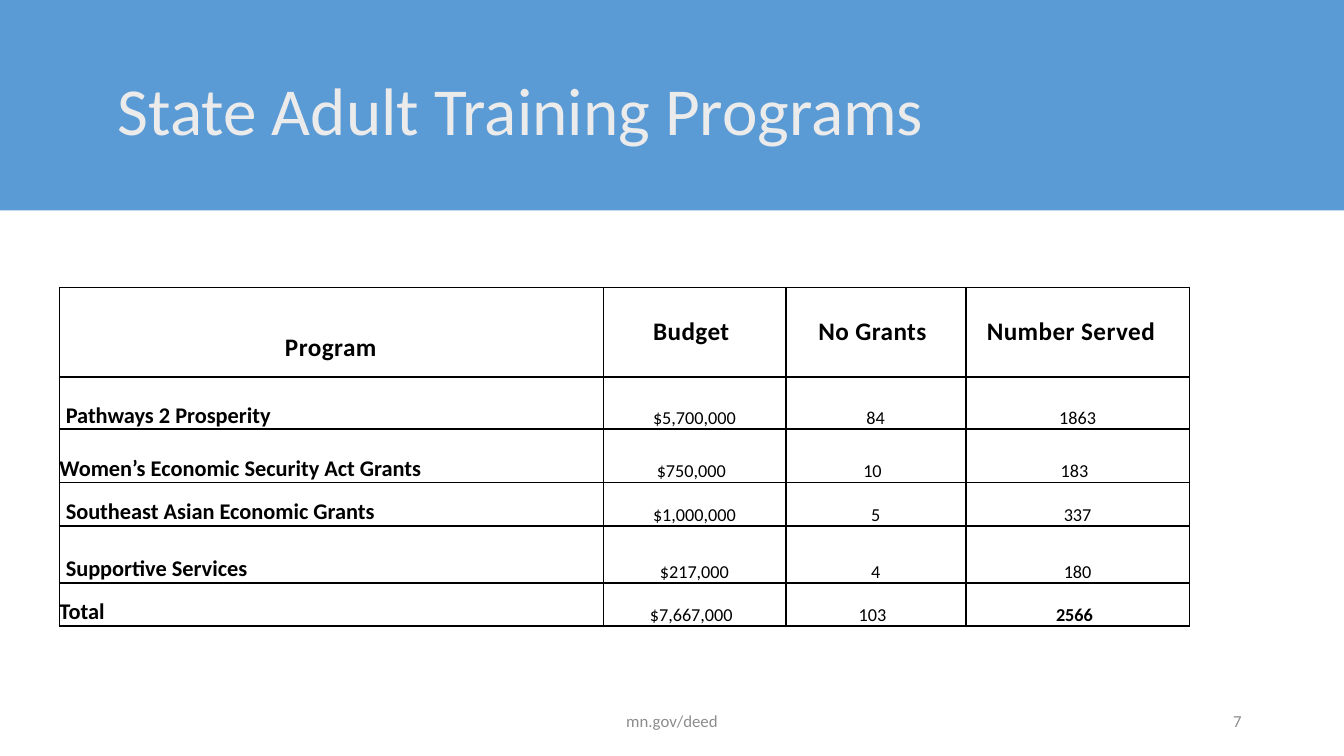
"""Build a slide with a table of state adult training programs."""
import pptx
import pptx.dml.color
import pptx.enum.shapes
import pptx.enum.text
import pptx.oxml
import pptx.oxml.ns
import pptx.util
from lxml import etree

Pt = pptx.util.Pt
Align = pptx.enum.text.PP_ALIGN
Anchor = pptx.enum.text.MSO_ANCHOR

TITLE = "State Adult Training Programs"
HEADERS = ["Program", "Budget", "No Grants", "Number Served"]
PROGRAMS = [
    ("Pathways 2 Prosperity", "$5,700,000", "84", "1863"),
    ("Women’s Economic Security Act Grants", "$750,000", "10", "183"),
    ("Southeast Asian Economic Grants", "$1,000,000", "5", "337"),
    ("Supportive Services", "$217,000", "4", "180"),
    ("Total", "$7,667,000", "103", "2566"),
]
FLUSH_PROGRAMS = {"Women’s Economic Security Act Grants", "Total"}
FOOTERS = [
    ("7", (678, 500.5, 216, 28.75), {"alignment": Align.RIGHT, "space_after": Pt(6)}),
    ("mn.gov/deed", (318, 500.5, 324, 28.75), {"alignment": Align.CENTER}),
]

SLIDE_SIZE = (960, 540)
BAND_BOX = (0, 0, 960, 150.25)
TITLE_BOX = (66, 28.75, 828, 104.5)
TABLE_ORIGIN = (42.5, 205.25)
COLUMN_WIDTHS = [388.5, 130.5, 128.5, 160]
ROW_HEIGHTS = [64, 37.25, 38, 31.25, 40.75, 30.75]
HEADER_MARGINS = [(22, 1), (0, 5), (0, 5), (0, 10)]


def color(value):
    return pptx.dml.color.RGBColor.from_string(value)


def set_values(target, values):
    for name, value in values.items():
        setattr(target, name, value)


def write(frame, text, size, hex_color, bold=False, **paragraph_format):
    paragraph = frame.paragraphs[0]
    set_values(paragraph, paragraph_format)
    run = paragraph.add_run()
    run.text = text
    set_values(run.font, {"name": "Calibri", "size": Pt(size), "bold": bold})
    run.font.color.rgb = color(hex_color)
    return run


def add_borders(cell):
    properties = cell._tc.get_or_add_tcPr()
    for position, side in enumerate(("lnL", "lnR", "lnT", "lnB")):
        line = etree.Element(pptx.oxml.ns.qn(f"a:{side}"), w=str(Pt(1)))
        fill = etree.SubElement(line, pptx.oxml.ns.qn("a:solidFill"))
        etree.SubElement(fill, pptx.oxml.ns.qn("a:srgbClr"), val="000000")
        properties.insert(position, line)


def add_title(slide):
    band = slide.shapes.add_shape(
        pptx.enum.shapes.MSO_SHAPE.RECTANGLE, *map(Pt, BAND_BOX))
    band.shadow.inherit = False
    band.fill.solid()
    band.fill.fore_color.rgb = color("5B9BD5")
    band.line.fill.background()
    slide.shapes.element.insert(2, band.element)
    title = slide.shapes.title
    set_values(title, dict(zip(("left", "top", "width", "height"), map(Pt, TITLE_BOX))))
    set_values(title.text_frame, {
        "vertical_anchor": Anchor.MIDDLE, "margin_left": Pt(18), "word_wrap": True})
    write(title.text_frame, TITLE, 48, "EBEBEB", alignment=Align.LEFT, line_spacing=0.9)


def format_cell(cell, text, row, column, program):
    cell.fill.solid()
    cell.fill.fore_color.rgb = color("FFFFFF")
    if row == 0:
        top, right = HEADER_MARGINS[column]
        left, anchor, size = 0, Anchor.MIDDLE, 18
    else:
        left = 0 if program in FLUSH_PROGRAMS else 4.5
        top, right, anchor = 0, 5, Anchor.BOTTOM
        size = 16 if column == 0 else 13
    set_values(cell, {
        "margin_left": Pt(left), "margin_right": Pt(right), "margin_top": Pt(top),
        "margin_bottom": 0, "vertical_anchor": anchor})
    grand_total = program == "Total" and column == len(HEADERS) - 1
    run = write(
        cell.text_frame, text, size, "000000", row == 0 or column == 0 or grand_total,
        alignment=Align.LEFT if row and column == 0 else Align.CENTER)
    if row == 0:
        run.font._element.set("spc", "30")
    add_borders(cell)


def add_program_table(slide):
    rows = [HEADERS, *PROGRAMS]
    size = (sum(COLUMN_WIDTHS), sum(ROW_HEIGHTS))
    table = slide.shapes.add_table(
        len(rows), len(HEADERS), *map(Pt, TABLE_ORIGIN + size)).table
    set_values(table, {"first_row": False, "horz_banding": False})
    for column, width in zip(table.columns, COLUMN_WIDTHS):
        column.width = Pt(width)
    for row, height in zip(table.rows, ROW_HEIGHTS):
        row.height = Pt(height)
    for row, values in enumerate(rows):
        for column, text in enumerate(values):
            format_cell(table.cell(row, column), text, row, column, values[0])


def add_footers(slide):
    for text, box, paragraph_format in FOOTERS:
        frame = slide.shapes.add_textbox(*map(Pt, box)).text_frame
        set_values(frame, {"word_wrap": True, "vertical_anchor": Anchor.MIDDLE})
        write(frame, text, 12, "8C8C8C", **paragraph_format)


def main():
    presentation = pptx.Presentation()
    presentation.slide_width, presentation.slide_height = map(Pt, SLIDE_SIZE)
    slide = presentation.slides.add_slide(presentation.slide_layouts[5])
    add_title(slide)
    add_program_table(slide)
    add_footers(slide)
    presentation.save("out.pptx")


if __name__ == "__main__":
    main()
